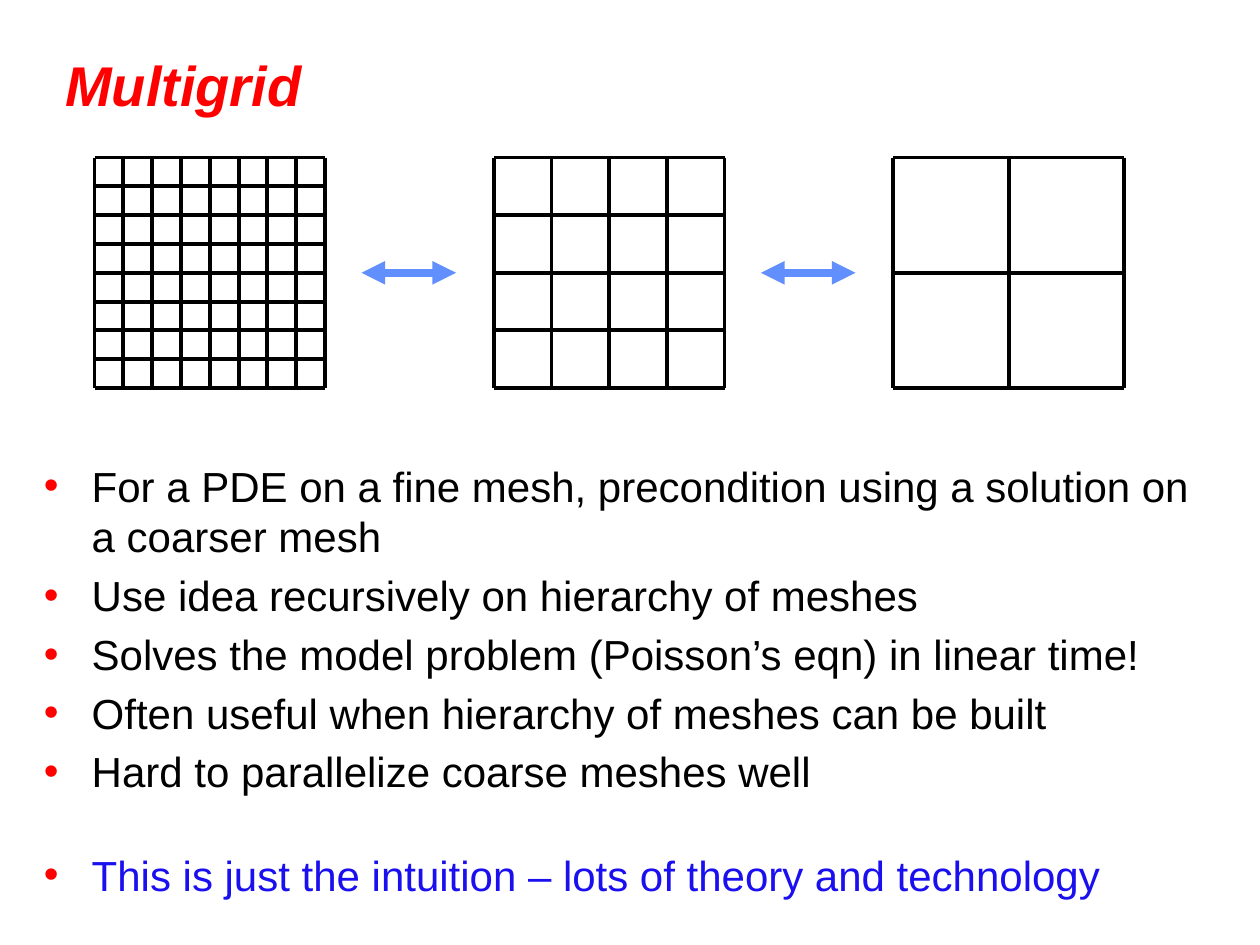
import dataclasses

import pptx
import pptx.dml.color
import pptx.enum.shapes
import pptx.enum.text
import pptx.oxml
import pptx.oxml.ns
import pptx.util

Inches = pptx.util.Inches
Pt = pptx.util.Pt

MESH_TOP = 1.25
MESH_SIDE = 1.83
MESH_MIDDLE = MESH_TOP + MESH_SIDE / 2
MESH_PITCH = 3.17
ARROW_LENGTH = 0.75
HANGING_INDENT = Inches(0.38)


@dataclasses.dataclass
class Mesh:
    left: float
    cells: int


@dataclasses.dataclass
class Point:
    words: str
    color: str = "000000"
    space_before: float = 4.6


MESHES = [Mesh(0.75 + level * MESH_PITCH, 8 // 2**level) for level in range(3)]
ARROW_LEFTS = [2.87 + step * MESH_PITCH for step in range(2)]
POINTS = [
    Point("For a PDE on a fine mesh, precondition using a solution on a coarser mesh"),
    Point("Use idea recursively on hierarchy of meshes"),
    Point("Solves the model problem (Poisson’s eqn) in linear time!"),
    Point("Often useful when hierarchy of meshes can be built"),
    Point("Hard to parallelize coarse meshes well"),
    Point("This is just the intuition – lots of theory and technology", "1A0FEF", 30),
]
TITLE_FONT = {"name": "Arial", "size": Pt(32), "bold": True, "italic": True}
POINT_FONT = {"name": "Arial", "size": Pt(24)}


def rgb(color: str):
    return pptx.dml.color.RGBColor.from_string(color)


def apply_format(target, values: dict) -> None:
    for attribute, value in values.items():
        setattr(target, attribute, value)


def add_xml(parent, tag: str, **attributes: str):
    child = pptx.oxml.parse_xml(f"<a:{tag} {pptx.oxml.ns.nsdecls('a')}/>")
    for key, value in attributes.items():
        child.set(key, value)
    parent.append(child)
    return child


def write(paragraph, words: str, font: dict, color: str) -> None:
    run = paragraph.add_run()
    run.text = words
    apply_format(run.font, font)
    run.font.color.rgb = rgb(color)


def add_text_frame(slide, left: float, top: float, width: float, height: float):
    frame = slide.shapes.add_textbox(
        Inches(left), Inches(top), Inches(width), Inches(height)
    ).text_frame
    frame.word_wrap = True
    return frame


def add_line(shapes, start: tuple, end: tuple, color: str, width: float):
    line = shapes.add_connector(
        pptx.enum.shapes.MSO_CONNECTOR.STRAIGHT,
        *(Inches(length) for length in (*start, *end)),
    )
    line.line.color.rgb = rgb(color)
    line.line.width = Pt(width)
    add_xml(line._element.spPr, "effectLst")
    return line


def draw_mesh(slide, mesh: Mesh) -> None:
    shapes = slide.shapes.add_group_shape().shapes
    right, bottom = mesh.left + MESH_SIDE, MESH_TOP + MESH_SIDE
    for index in range(mesh.cells + 1):
        offset = index * MESH_SIDE / mesh.cells
        x, y = mesh.left + offset, MESH_TOP + offset
        add_line(shapes, (mesh.left, y), (right, y), "000000", 2.25)
        add_line(shapes, (x, MESH_TOP), (x, bottom), "000000", 2.25)


def draw_double_arrow(slide, left: float) -> None:
    arrow = add_line(
        slide.shapes, (left, MESH_MIDDLE), (left + ARROW_LENGTH, MESH_MIDDLE), "618FFD", 4.5
    )
    outline = arrow.line._get_or_add_ln()
    for end in ("headEnd", "tailEnd"):
        add_xml(outline, end, type="triangle")


def add_point(paragraph, point: Point) -> None:
    spacing = {"space_before": Pt(point.space_before), "line_spacing": Pt(29)}
    apply_format(paragraph, spacing)
    properties = paragraph._p.get_or_add_pPr()
    properties.set("marL", str(HANGING_INDENT))
    properties.set("indent", str(-HANGING_INDENT))
    add_xml(add_xml(properties, "buClr"), "srgbClr", val="FF0000")
    add_xml(properties, "buFont", typeface="Arial")
    add_xml(properties, "buChar", char="•")
    write(paragraph, point.words, POINT_FONT, point.color)


def main() -> None:
    presentation = pptx.Presentation()
    apply_format(
        presentation, {"slide_width": Inches(10), "slide_height": Inches(7.5)}
    )
    slide = presentation.slides.add_slide(presentation.slide_layouts[6])

    title = add_text_frame(slide, 0.42, 0.33, 9.33, 0.67)
    title.vertical_anchor = pptx.enum.text.MSO_ANCHOR.MIDDLE
    write(title.paragraphs[0], "Multigrid", TITLE_FONT, "FF0000")

    points = add_text_frame(slide, 0.25, 3.6, 9.33, 3.67)
    for index, point in enumerate(POINTS):
        add_point(points.add_paragraph() if index else points.paragraphs[0], point)

    for mesh in MESHES:
        draw_mesh(slide, mesh)
    for left in ARROW_LEFTS:
        draw_double_arrow(slide, left)

    presentation.save("out.pptx")


if __name__ == "__main__":
    main()
